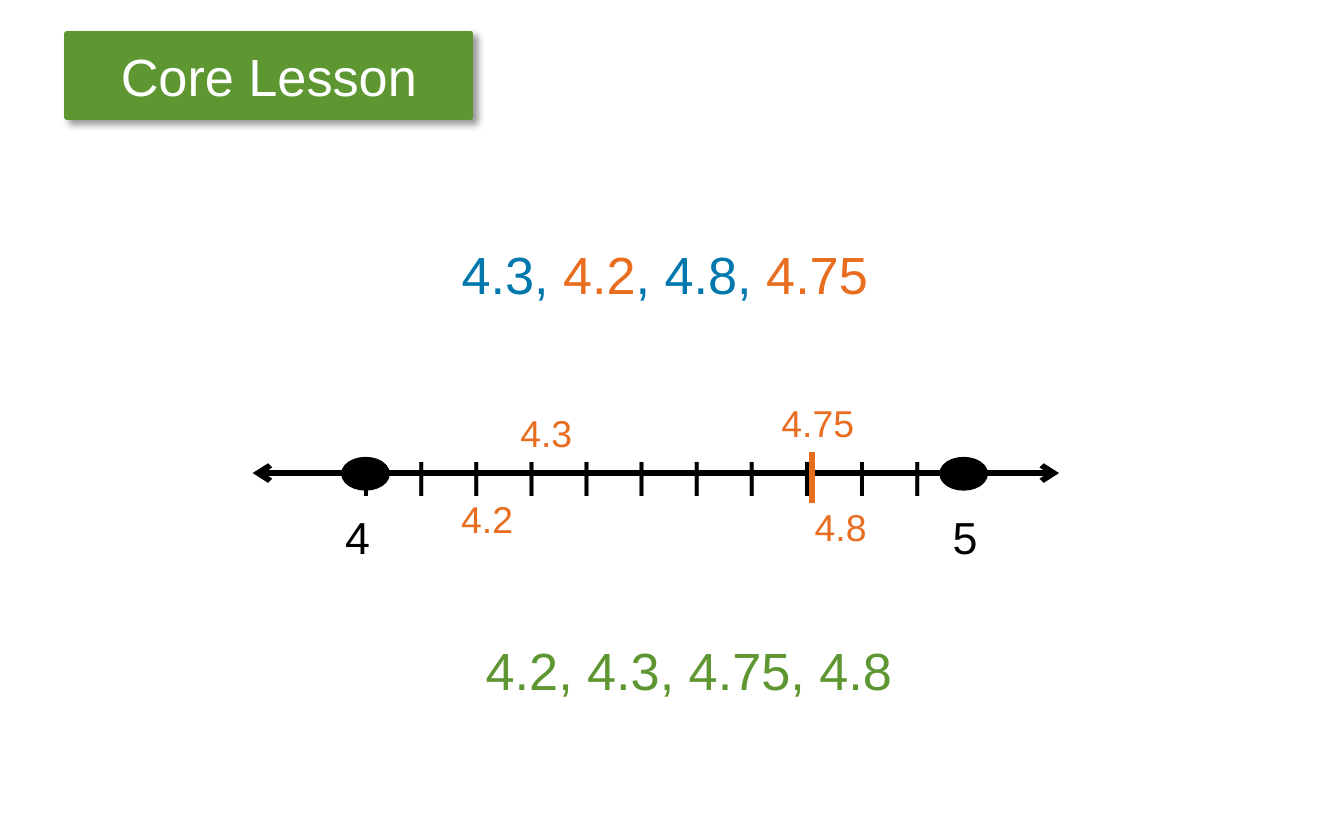
from lxml import etree
from pptx import Presentation
from pptx.dml.color import RGBColor
from pptx.enum.shapes import MSO_CONNECTOR, MSO_SHAPE
from pptx.enum.text import MSO_ANCHOR, MSO_AUTO_SIZE, PP_ALIGN
from pptx.oxml import parse_xml
from pptx.oxml.ns import qn
from pptx.util import Inches, Pt

STRAIGHT = MSO_CONNECTOR.STRAIGHT
OVAL = MSO_SHAPE.OVAL
MIDDLE = MSO_ANCHOR.MIDDLE
NO_FIT = MSO_AUTO_SIZE.NONE
LEFT, CENTER = PP_ALIGN.LEFT, PP_ALIGN.CENTER

FONT, TICK_FONT = "Arial", "DejaVu Sans"
GREEN, BLUE, ORANGE = "5E9732", "0078AE", "E86D1F"
BLACK, WHITE = "000000", "FFFFFF"
TICKS, TICK_GAP = 11, 0.41
DRAWING_NS = "http://schemas.openxmlformats.org/drawingml/2006/main"
SHADOW = (
    f'<a:effectLst xmlns:a="{DRAWING_NS}">'
    '<a:outerShdw blurRad="50800" dist="38100" dir="2700000" algn="tl" rotWithShape="0">'
    '<a:srgbClr val="000000"><a:alpha val="40000"/></a:srgbClr>'
    "</a:outerShdw></a:effectLst>"
)


def rgb(hex_string):
    """Return the colour for a hex string."""
    return RGBColor.from_string(hex_string)


def place(shape, box):
    """Move and size a shape to a box given in inches."""
    shape.left, shape.top, shape.width, shape.height = map(Inches, box)


def paint(shape, color):
    """Give a shape a fill and a 3 pt outline in one colour."""
    shape.fill.solid()
    shape.fill.fore_color.rgb = rgb(color)
    shape.line.color.rgb = rgb(color)
    shape.line.width = Pt(3)


def style(r, size, color, font=FONT):
    """Format one run."""
    r.font.name = font
    r.font.size = Pt(size)
    r.font.color.rgb = rgb(color)


def add_text(s, box, parts, size, align=CENTER, font=FONT):
    """Add a one-line text box made of (text, colour) parts."""
    sp = s.shapes.add_textbox(*map(Inches, box))
    tf = sp.text_frame
    tf.word_wrap = True
    p = tf.paragraphs[0]
    p.alignment = align
    for text, color in parts:
        r = p.add_run()
        r.text = text
        style(r, size, color, font)
    return p


def add_line(s, start, end, color, arrows=False):
    """Add a straight 3 pt line, with arrowheads at both ends if asked."""
    line = s.shapes.add_connector(STRAIGHT, *map(Inches, (*start, *end)))
    line.line.color.rgb = rgb(color)
    line.line.width = Pt(3)
    if arrows:
        ln = line.line._get_or_add_ln()
        for tag in ("a:headEnd", "a:tailEnd"):
            etree.SubElement(ln, qn(tag), type="arrow")
    etree.SubElement(line._element.spPr, qn("a:effectLst"))


def add_title(s, box):
    """Turn the title placeholder into the green banner."""
    title = s.shapes.title
    place(title, box)
    paint(title, GREEN)
    title._element.spPr.append(parse_xml(SHADOW))
    tf = title.text_frame
    tf.text = "Core Lesson"
    tf.auto_size = NO_FIT
    tf.vertical_anchor = MIDDLE
    p = tf.paragraphs[0]
    p.alignment = CENTER
    style(p.runs[0], 28, WHITE)


def add_ticks(s, box):
    """Write the tick marks as letters on evenly spaced tab stops."""
    p = add_text(s, box, [("\t".join("l" * TICKS), BLACK)], 24, LEFT, TICK_FONT)
    tabs = etree.SubElement(p._p.get_or_add_pPr(), qn("a:tabLst"))
    for i in range(1, TICKS):
        etree.SubElement(tabs, qn("a:tab"), pos=str(Inches(i * TICK_GAP)), algn="l")


def add_number_line(s, box):
    """Draw the number line from 4 to 5 with its ticks, end points and labels."""
    left, top, width, height = box
    axis = top + 0.59
    add_line(s, (left, axis), (left + width, axis), BLACK, arrows=True)
    add_ticks(s, (left + 0.7, axis - 0.21, 5.01, 0.5))

    for text, dot_x, label_x in (("4", 0.68, 0.59), ("5", 5.13, 5.11)):
        dot = s.shapes.add_shape(OVAL, 0, 0, 0, 0)
        place(dot, (left + dot_x, axis - 0.1, 0.32, 0.21))
        dot.shadow.inherit = False
        paint(dot, BLACK)
        add_text(s, (left + label_x, top + height - 0.5, 0.49, 0.5), [(text, BLACK)], 24, LEFT)

    mark_x = left + 4.16
    add_line(s, (mark_x, axis - 0.16), (mark_x, axis + 0.22), ORANGE)
    labels = (("4.2", 1.37, 0.71), ("4.3", 1.81, 0.07), ("4.8", 4.0, 0.77), ("4.75", 3.83, 0))
    for text, x, y in labels:
        add_text(s, (left + x, top + y, 0.75, 0.45), [(text, ORANGE)], 20)


def main():
    """Build the slide and save it."""
    prs = Presentation()
    prs.slide_width, prs.slide_height = Inches(10), Inches(6.25)
    s = prs.slides.add_slide(prs.slide_layouts[5])
    add_title(s, (0.5, 0.25, 3, 0.62))
    question = [("4.3, ", BLUE), ("4.2", ORANGE), (", 4.8, ", BLUE), ("4.75 ", ORANGE)]
    add_text(s, (2, 1.75, 6, 0.5), question, 28)
    add_number_line(s, (1.88, 2.93, 6, 1.31))
    answer = add_text(s, (2.75, 4.75, 4.75, 0.53), [("4.2, 4.3, 4.75, 4.8", GREEN)], 28)
    answer.line_spacing = 0.9
    prs.save("out.pptx")


if __name__ == "__main__":
    main()
